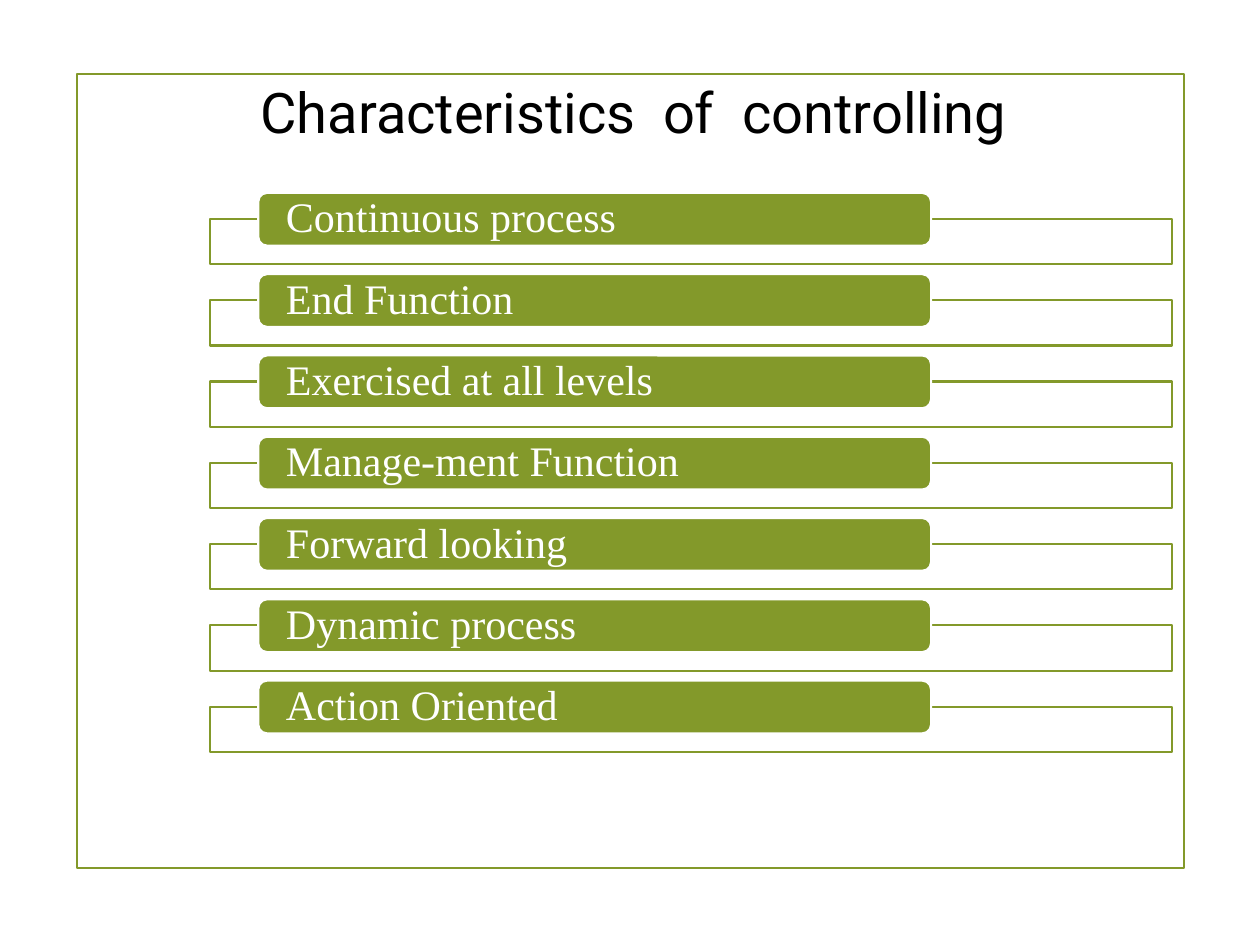
from lxml import etree
from pptx import Presentation
from pptx.dml.color import RGBColor
from pptx.enum import shapes, text
from pptx.oxml.ns import qn
from pptx.util import Pt

TITLE = "Characteristics  of  controlling"
CHARACTERISTICS = [
    "Continuous process",
    "End Function",
    "Exercised at all levels",
    "Manage-ment Function",
    "Forward looking",
    "Dynamic process",
    "Action Oriented",
]

GREEN, WHITE, BLACK = "83992A", "FFFFFF", "000000"
LINE_WIDTH = 1.25

# left, top, width, height in points
FRAME = (43.9, 42.5, 632.9, 453.6)
TITLE_BOX = (59.5, 43.9, 605.5, 43.2)
PANEL_LEFT, PANEL_WIDTH, PANEL_HEIGHT = 120.2, 549.4, 25.9
LABEL_LEFT, LABEL_WIDTH, LABEL_HEIGHT = 147.6, 384.5, 30.2
FIRST_LABEL_TOP, ROW_STEP = 110.2, 46.45
PANEL_DROP = 14.9  # from the top of a label to the top of its panel


def color(hex_code):
    return RGBColor.from_string(hex_code)


def add_box(slide, kind, box, line, fill=None):
    shape = slide.shapes.add_shape(kind, *map(Pt, box))
    shape.shadow.inherit = False
    shape.line.color.rgb = color(line)
    shape.line.width = Pt(LINE_WIDTH)
    if fill:
        shape.fill.solid()
        shape.fill.fore_color.rgb = color(fill)
    else:
        shape.fill.background()
    return shape


def set_opacity(shape, percent):
    fill_color = shape.fill._xPr.find(qn("a:solidFill"))[0]
    etree.SubElement(fill_color, qn("a:alpha"), val=str(percent * 1000))


def style_text(frame, font_name, size, hex_code, align, line_spacing):
    paragraph = frame.paragraphs[0]
    paragraph.alignment = align
    paragraph.line_spacing = line_spacing
    font = paragraph.runs[0].font
    font.name, font.size = font_name, Pt(size)
    font.color.rgb = color(hex_code)


def add_characteristic(slide, name, top):
    panel = add_box(slide, shapes.MSO_SHAPE.RECTANGLE,
                    (PANEL_LEFT, top + PANEL_DROP, PANEL_WIDTH, PANEL_HEIGHT),
                    GREEN, WHITE)
    set_opacity(panel, 90)

    label = add_box(slide, shapes.MSO_SHAPE.ROUNDED_RECTANGLE,
                    (LABEL_LEFT, top, LABEL_WIDTH, LABEL_HEIGHT), WHITE, GREEN)
    frame = label.text_frame
    frame.text = name
    frame.word_wrap = True
    frame.vertical_anchor = text.MSO_ANCHOR.MIDDLE
    frame.margin_left = frame.margin_right = Pt(14.4)
    frame.margin_top = frame.margin_bottom = 0
    style_text(frame, "Times New Roman", 24, WHITE, text.PP_ALIGN.LEFT, 0.9)


def main():
    prs = Presentation()
    prs.slide_width, prs.slide_height = Pt(720), Pt(540)
    slide = prs.slides.add_slide(prs.slide_layouts[5])

    add_box(slide, shapes.MSO_SHAPE.RECTANGLE, FRAME, GREEN)
    for row, name in enumerate(CHARACTERISTICS):
        add_characteristic(slide, name, FIRST_LABEL_TOP + row * ROW_STEP)

    title = slide.shapes.title
    title.left, title.top, title.width, title.height = map(Pt, TITLE_BOX)
    title.text_frame.text = TITLE
    title.text_frame.auto_size = text.MSO_AUTO_SIZE.NONE
    title.text_frame.vertical_anchor = text.MSO_ANCHOR.TOP
    style_text(title.text_frame, "Roboto", 32, BLACK, text.PP_ALIGN.CENTER, 0.93)

    prs.save("out.pptx")


if __name__ == "__main__":
    main()
